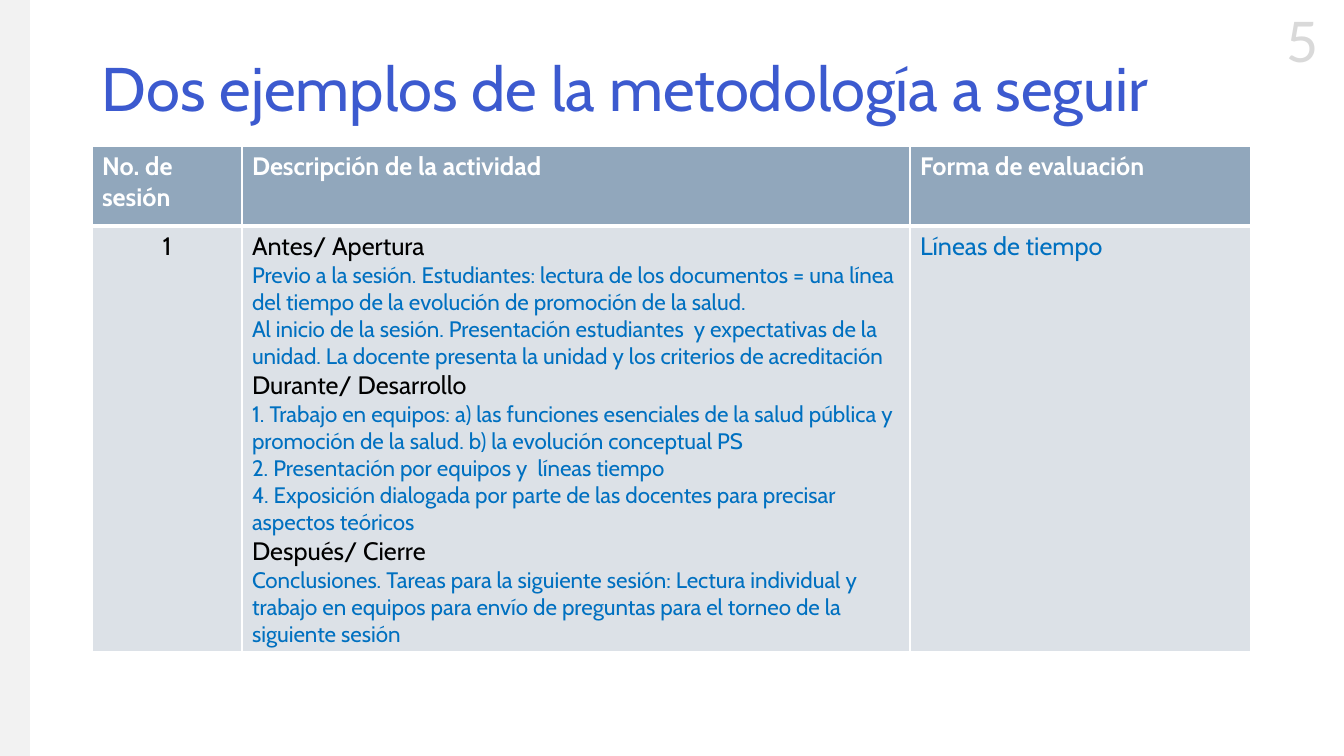
from pptx import Presentation
from pptx.dml.color import RGBColor
from pptx.enum.shapes import MSO_SHAPE as Shape
from pptx.enum.text import MSO_ANCHOR as Anchor, PP_ALIGN as Align
from pptx.oxml import parse_xml
from pptx.oxml.ns import nsdecls
from pptx.util import Emu, Pt

# Content
TITLE = "Dos ejemplos de la metodología a seguir"
PAGE_NUMBER = "5"
HEADERS = ["No. de sesión", "Descripción de la actividad", "Forma de evaluación"]
SESSION = "1"
EVALUATION = "Líneas de tiempo"
PHASES = [
    ("Antes/ Apertura", [
        "Previo a la sesión. Estudiantes: lectura de los documentos = una línea "
        "del tiempo de la evolución de promoción de la salud.",
        "Al inicio de la sesión. Presentación estudiantes  y expectativas de la "
        "unidad. La docente presenta la unidad y los criterios de acreditación",
    ]),
    ("Durante/ Desarrollo", [
        "1. Trabajo en equipos: a) las funciones esenciales de la salud pública y "
        "promoción de la salud. b) la evolución conceptual PS",
        "2. Presentación por equipos y  líneas tiempo",
        "4. Exposición dialogada por parte de las docentes para precisar "
        "aspectos teóricos",
    ]),
    ("Después/ Cierre", [
        "Conclusiones. Tareas para la siguiente sesión: Lectura individual y "
        "trabajo en equipos para envío de preguntas para el torneo de la "
        "siguiente sesión",
    ]),
]

# Look
WHITE = RGBColor(0xFF, 0xFF, 0xFF)
BLACK = RGBColor(0x00, 0x00, 0x00)
TITLE_BLUE = RGBColor(0x3C, 0x5A, 0xCF)
TEXT_BLUE = RGBColor(0x00, 0x70, 0xC0)
HEADER_FILL = RGBColor(0x91, 0xA7, 0xBC)
BODY_FILL = RGBColor(0xDC, 0xE1, 0xE7)
BAND_GRAY = RGBColor(0xF2, 0xF2, 0xF2)
NUMBER_GRAY = RGBColor(0xD9, 0xD9, 0xD9)
FONT, NUMBER_FONT = "Cabin", "Lato"

# Lengths in px
PAGE_WIDTH, PAGE_HEIGHT = 1344, 756
BAND_WIDTH = 30
TITLE_BOX = (92, 37, 1159, 109)
NUMBER_BOX = (1264, 2, 76, 78)
TABLE_LEFT, TABLE_TOP = 92, 146
COLUMNS = [150, 668, 341]
ROWS = [80, 426]


def px(length):
    return Emu(round(length * 914400 / 100.8))


def style(para, size, color, bold=False, name=FONT, align=Align.LEFT):
    para.alignment = align
    font = para.font
    font.name, font.size, font.bold = name, Pt(size), bold
    font.color.rgb = color


def add_text(page, box, text, **look):
    frame = page.shapes.add_textbox(*map(px, box)).text_frame
    para = frame.paragraphs[0]
    para.text = text
    style(para, **look)
    return frame


def fill_cell(cell, lines, fill, bottom_width):
    """Each line is a text with the look of its paragraph."""
    cell.fill.solid()
    cell.fill.fore_color.rgb = fill
    frame = cell.text_frame
    frame.text = "\n".join(text for text, look in lines)
    for para, (text, look) in zip(frame.paragraphs, lines):
        style(para, **look)
    # Borders come before the fill in the cell properties
    widths = {"lnL": 1, "lnR": 1, "lnT": 1, "lnB": bottom_width}
    for place, (tag, width) in enumerate(widths.items()):
        border = parse_xml(
            f'<a:{tag} {nsdecls("a")} w="{Pt(width)}"><a:solidFill>'
            f'<a:srgbClr val="{WHITE}"/></a:solidFill></a:{tag}>')
        cell._tc.get_or_add_tcPr().insert(place, border)


def add_sessions(page):
    frame = page.shapes.add_table(
        len(ROWS), len(COLUMNS),
        *map(px, (TABLE_LEFT, TABLE_TOP, sum(COLUMNS), sum(ROWS))))
    table = frame.table
    table.horz_banding = False
    for column, width in zip(table.columns, COLUMNS):
        column.width = px(width)
    for row, height in zip(table.rows, ROWS):
        row.height = px(height)

    header = dict(size=18, color=WHITE, bold=True)
    phase_look = dict(size=18, color=BLACK)
    step_look = dict(size=16, color=TEXT_BLUE)
    description = []
    for phase, steps in PHASES:
        description.append((phase, phase_look))
        description += [(step, step_look) for step in steps]
    body = [
        [(SESSION, dict(phase_look, align=Align.CENTER))],
        description,
        [(EVALUATION, dict(size=18, color=TEXT_BLUE))],
    ]
    for index, (text, lines) in enumerate(zip(HEADERS, body)):
        fill_cell(table.cell(0, index), [(text, header)], HEADER_FILL, 3)
        fill_cell(table.cell(1, index), lines, BODY_FILL, 1)
        # The shared edge has one width in both rows
        table.cell(1, index)._tc.tcPr[2].set("w", str(Pt(3)))


def main():
    deck = Presentation()
    deck.slide_width, deck.slide_height = px(PAGE_WIDTH), px(PAGE_HEIGHT)
    page = deck.slides.add_slide(deck.slide_layouts[6])

    # Page number and side band
    add_text(page, NUMBER_BOX, PAGE_NUMBER, size=40, color=NUMBER_GRAY,
             name=NUMBER_FONT, align=Align.CENTER)
    band = page.shapes.add_shape(
        Shape.RECTANGLE, 0, 0, px(BAND_WIDTH), px(PAGE_HEIGHT))
    band.shadow.inherit = False
    band.fill.solid()
    band.fill.fore_color.rgb = BAND_GRAY
    band.line.fill.background()

    # Title
    title = add_text(page, TITLE_BOX, TITLE, size=44, color=TITLE_BLUE)
    title.word_wrap = True
    title.vertical_anchor = Anchor.MIDDLE
    title.paragraphs[0].line_spacing = 0.9

    # Table of sessions
    add_sessions(page)
    deck.save("out.pptx")


if __name__ == "__main__":
    main()
